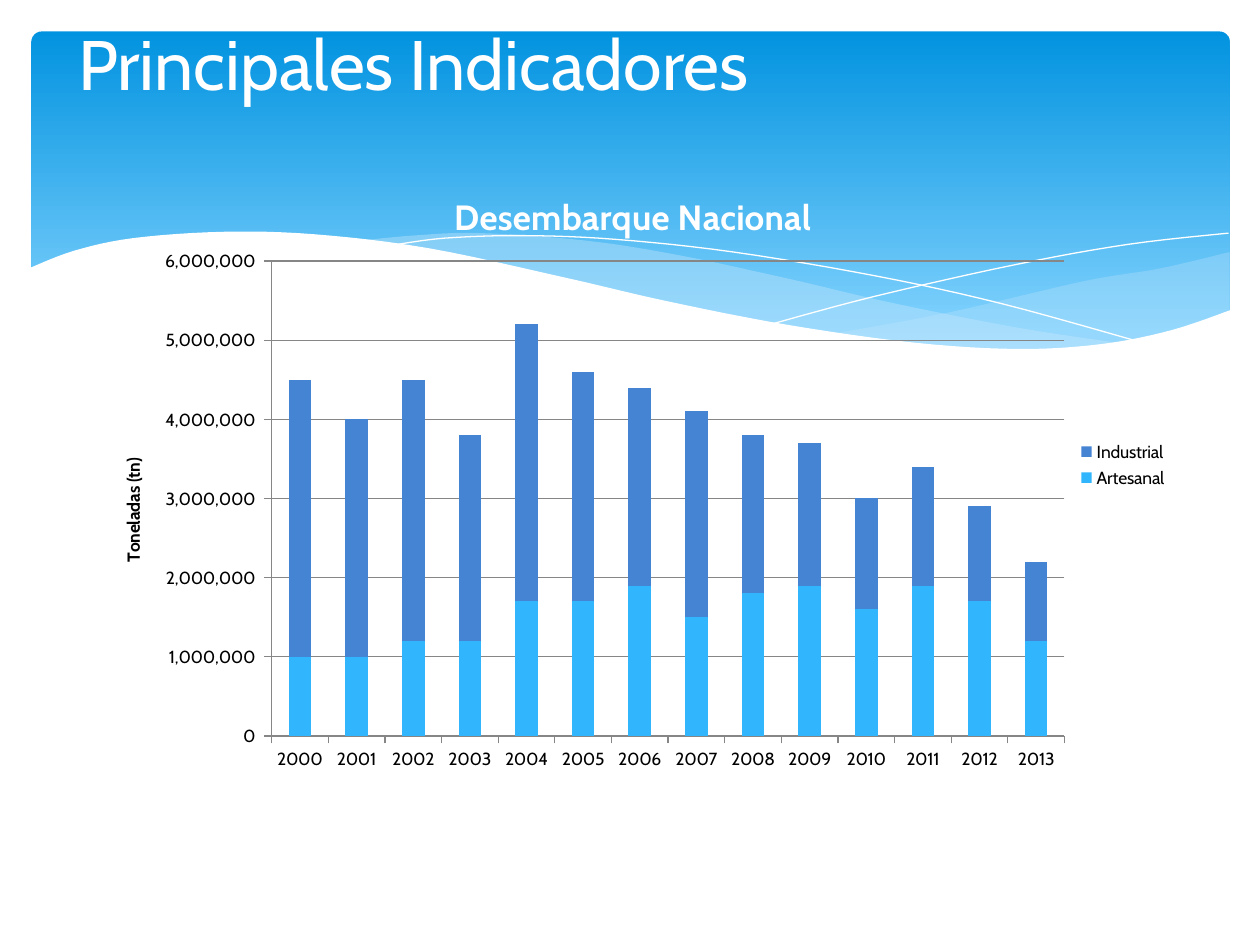
"""Build the slide on yearly national fish landings."""
from dataclasses import dataclass

from lxml import etree
from pptx import Presentation
from pptx.chart.data import CategoryChartData
from pptx.dml.color import RGBColor
from pptx.enum.chart import XL_CHART_TYPE, XL_LEGEND_POSITION, XL_TICK_MARK
from pptx.enum.shapes import MSO_SHAPE
from pptx.enum.text import MSO_ANCHOR, PP_ALIGN
from pptx.oxml.ns import qn
from pptx.util import Inches, Pt

STACKED = XL_CHART_TYPE.COLUMN_STACKED
RIGHT = XL_LEGEND_POSITION.RIGHT
OUT, NONE = XL_TICK_MARK.OUTSIDE, XL_TICK_MARK.NONE
ROUND = MSO_SHAPE.ROUNDED_RECTANGLE
MIDDLE, CENTER = MSO_ANCHOR.MIDDLE, PP_ALIGN.CENTER
CELL = Inches(0.1)
COLS, ROWS = 100, 75


@dataclass(frozen=True)
class Theme:
    font: str = "Cabin"
    white: str = "FFFFFF"
    ink: str = "000000"
    grid: str = "868686"
    deep: str = "0293E0"
    sky: str = "83D3FE"
    mist: str = "C6E7FC"
    light: str = "31B6FD"
    blue: str = "4584D3"
    head: int = 40
    sub: int = 20
    small: int = 10


def rgb(code):
    return RGBColor.from_string(code)


def apply(item, style):
    for name, value in style.items():
        setattr(item, name, value)


def cells(*nums):
    return [round(n * CELL) for n in nums]


def bend(knots, steps=6):
    """Return points of a smooth curve through the knots."""
    pts = [knots[0], *knots, knots[-1]]
    out = [knots[0]]
    for a, b, c, d in zip(pts, pts[1:], pts[2:], pts[3:]):
        for i in range(1, steps + 1):
            t = i / steps
            out.append(tuple(
                (2 * q + (r - p) * t + (2 * p - 5 * q + 4 * r - s) * t ** 2
                 + (3 * q - p - 3 * r + s) * t ** 3) / 2
                for p, q, r, s in zip(a, b, c, d)))
    return out


def place(node, index, inner=False, **box):
    """Fix a chart part by shares of the chart's size."""
    for old in node.findall(qn("c:layout")):
        node.remove(old)
    layout = etree.Element(qn("c:layout"))
    manual = etree.SubElement(layout, qn("c:manualLayout"))
    if inner:
        etree.SubElement(manual, qn("c:layoutTarget"), val="inner")
    for key in "xy":
        etree.SubElement(manual, qn(f"c:{key}Mode"), val="edge")
    for key, value in box.items():
        etree.SubElement(manual, qn(f"c:{key}"), val=str(value))
    node.insert(index, layout)


class Deck:
    """Hold the theme and the current slide."""

    def __init__(self, theme):
        self.theme = theme
        self.show = Presentation()
        apply(self.show, {"slide_width": COLS * CELL, "slide_height": ROWS * CELL})
        self.slide = self.show.slides.add_slide(self.show.slide_layouts[5])

    def type(self, font, size, color, bold=False):
        apply(font, {"name": self.theme.font, "size": Pt(size), "bold": bold})
        font.color.rgb = rgb(color)

    def panel(self, box, curve):
        shape = self.slide.shapes.add_shape(ROUND, *cells(*box))
        shape.adjustments[0] = curve
        shape.shadow.inherit = False
        shape.line.fill.background()
        shape.fill.gradient()
        shape.fill.gradient_angle = 270
        stops = ((0, self.theme.deep), (0.9, self.theme.sky))
        for stop, (pos, color) in zip(shape.fill.gradient_stops, stops):
            stop.position = pos
            stop.color.rgb = rgb(color)

    def trace(self, pts, close):
        first, *rest = [cells(*p) for p in pts]
        path = self.slide.shapes.build_freeform(*first)
        path.add_line_segments(rest, close=close)
        shape = path.convert_to_shape()
        shape.shadow.inherit = False
        return shape

    def wave(self, *runs, color, alpha=100):
        shape = self.trace([p for run in runs for p in bend(run)], True)
        shape.line.fill.background()
        shape.fill.solid()
        shape.fill.fore_color.rgb = rgb(color)
        if alpha < 100:
            tint = next(shape.fill._xPr.iter(qn("a:srgbClr")))
            etree.SubElement(tint, qn("a:alpha"), val=str(alpha * 1000))

    def thread(self, knots):
        shape = self.trace(bend(knots), False)
        shape.fill.background()
        shape.line.color.rgb = rgb(self.theme.white)
        shape.line.width = Pt(0)

    def title(self, text, box):
        shape = self.slide.shapes.title
        apply(shape, dict(zip(("left", "top", "width", "height"), cells(*box))))
        frame = shape.text_frame
        frame.text = text
        frame.vertical_anchor = MIDDLE
        line = frame.paragraphs[0]
        line.alignment = CENTER
        self.type(line.runs[0].font, self.theme.head, self.theme.white)
        self.slide.shapes._spTree.append(shape._element)

    def label(self, owner, text, size, color, **spot):
        frame = owner.text_frame
        frame.text = text
        self.type(frame.paragraphs[0].runs[0].font, size, color, True)
        place(owner._element, 1, **spot)

    def chart(self, box, title, unit, cats, series):
        look = self.theme
        data = CategoryChartData()
        data.categories = cats
        for name, values, color in series:
            data.add_series(name, [v * 100000 for v in values])
        chart = self.slide.shapes.add_chart(STACKED, *cells(*box), data).chart
        self.type(chart.font, look.small, look.ink)
        self.label(chart.chart_title, title, look.sub, look.white, x=0.33, y=0.05)
        chart.has_legend = True
        apply(chart.legend, {"position": RIGHT, "include_in_layout": False})
        place(chart.legend._element, 1, x=0.9, y=0.45)
        plot = chart.plots[0]
        apply(plot, {"gap_width": 150, "overlap": 100, "vary_by_categories": False})
        for bar, (name, values, color) in zip(plot.series, series):
            bar.format.fill.solid()
            bar.format.fill.fore_color.rgb = rgb(color)
        axis = chart.value_axis
        apply(axis, {"minimum_scale": 0, "maximum_scale": 6000000,
                     "major_unit": 1000000, "has_major_gridlines": True})
        apply(axis.tick_labels, {"number_format": r"#,##0_);\(#,##0\)",
                                 "number_format_is_linked": False})
        for part in (axis, chart.category_axis):
            apply(part, {"major_tick_mark": OUT, "minor_tick_mark": NONE})
        for part in (axis, chart.category_axis, axis.major_gridlines):
            part.format.line.color.rgb = rgb(look.grid)
            part.format.line.width = Pt(0.75)
        self.label(axis.axis_title, unit, look.small, look.ink, x=0.03, y=0.48)
        body = next(axis.axis_title._element.iter(qn("a:bodyPr")))
        apply_to = {"rot": "-5400000", "vert": "horz"}
        for key, value in apply_to.items():
            body.set(key, value)
        area = next(chart._chartSpace.iter(qn("c:plotArea")))
        place(area, 0, True, x=0.17, y=0.17, w=0.72, h=0.76)


def main():
    look = Theme()
    deck = Deck(look)
    deck.panel((2.5, 2.5, 95.1, 27), 0.03)
    deck.wave([(97.6, 20), (92.1, 21.3), (86.1, 22.3), (75.3, 24.8), (66.1, 26.5)],
              [(66.1, 26.5), (73.2, 27.4), (80.3, 27.8), (87.2, 27.4),
               (93.5, 26.2), (97.6, 24.7)], color=look.mist, alpha=29)
    deck.wave([(89.3, 27.3), (80.7, 26), (70.6, 24), (62.9, 22.2), (54.1, 20.3),
               (46.5, 19.1), (38, 18.5), (32.8, 18.7), (28.6, 19.1)],
              [(28.6, 19.1), (36.2, 20.3), (44.9, 22.2), (56.6, 24.8), (66.5, 26.6),
               (74.8, 27.6), (81.8, 27.8), (89.3, 27.3)], color=look.mist, alpha=40)
    deck.thread([(30.9, 19.5), (35.3, 18.9), (41.6, 18.7), (48.9, 19), (58.2, 20),
                 (69.5, 21.9), (79.5, 24.1), (90.7, 27.2)])
    deck.thread([(61.3, 25.7), (69.5, 23.5), (80.6, 21), (89.5, 19.4), (97.5, 18.5)])
    deck.wave([(97.7, 24.6), (93, 26.2), (87.5, 27.3), (80.9, 27.7), (72.6, 27.2),
               (62.6, 25.8), (52.9, 23.9), (44.7, 22), (34, 19.7), (25, 18.6),
               (17.7, 18.4), (10.6, 18.9), (5.9, 19.9), (2.3, 21.3)],
              [(2.3, 32.9), (97.7, 32.9)], color=look.white)
    deck.title("Principales Indicadores", (-12.2, -1.9, 90, 13.7))
    deck.chart((6.7, 12.3, 87.4, 49.6), "Desembarque Nacional", "Toneladas (tn)",
               [str(year) for year in range(2000, 2014)],
               [("Artesanal", (10, 10, 12, 12, 17, 17, 19, 15, 18, 19, 16, 19, 17, 12),
                 look.light),
                ("Industrial", (35, 30, 33, 26, 35, 29, 25, 26, 20, 18, 14, 15, 12, 10),
                 look.blue)])
    deck.show.save("out.pptx")


if __name__ == "__main__":
    main()
